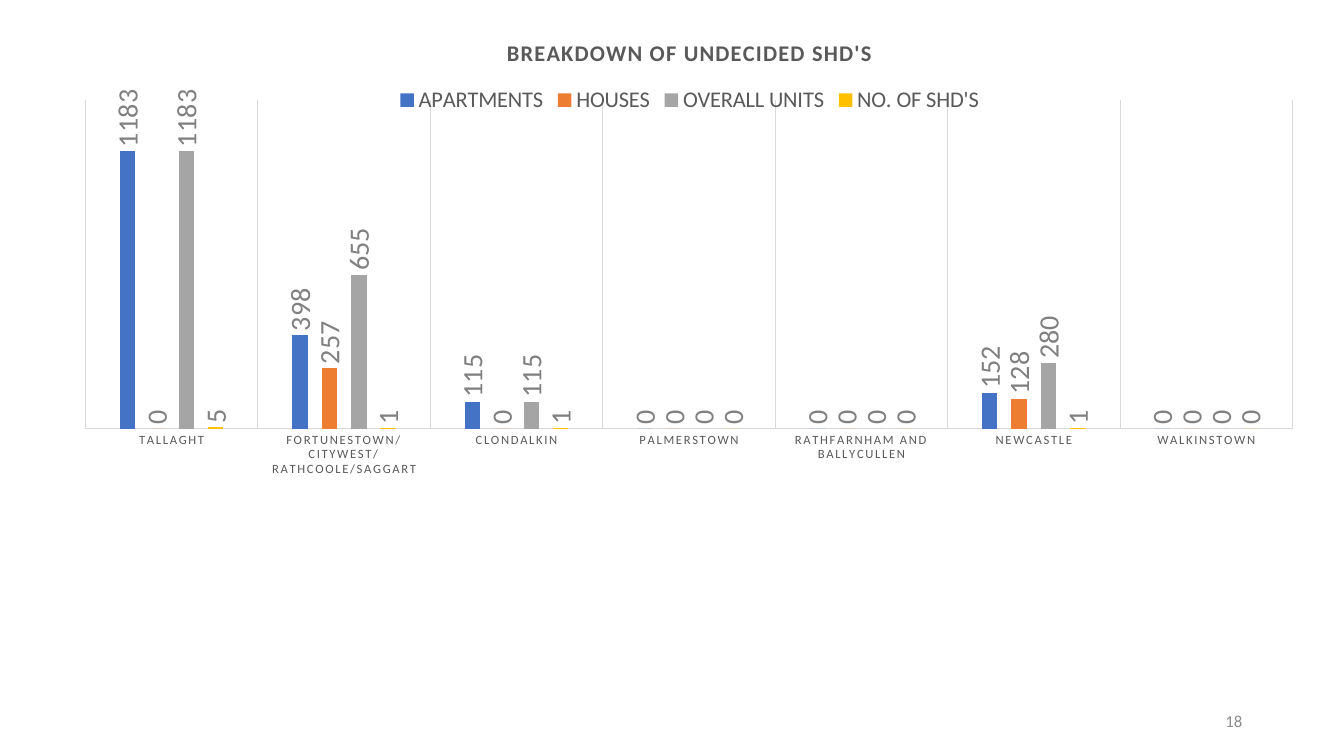
"""Build a slide with a column chart of undecided housing schemes by area."""
from lxml import etree
from pptx import Presentation
from pptx.chart.data import CategoryChartData
from pptx.dml.color import RGBColor
from pptx.enum.chart import XL_CHART_TYPE, XL_LABEL_POSITION, XL_LEGEND_POSITION, XL_TICK_MARK
from pptx.enum.text import MSO_ANCHOR, PP_ALIGN
from pptx.oxml.ns import qn
from pptx.util import Inches, Pt

CLUSTERED = XL_CHART_TYPE.COLUMN_CLUSTERED
OUTSIDE_END = XL_LABEL_POSITION.OUTSIDE_END
LEGEND_TOP = XL_LEGEND_POSITION.TOP
NO_TICK = XL_TICK_MARK.NONE
MIDDLE = MSO_ANCHOR.MIDDLE
RIGHT = PP_ALIGN.RIGHT

WIDTH, HEIGHT = Inches(13.33), Inches(7.5)
FONT = "Calibri"
COLORS = {
    "heading": "595959",
    "value": "808080",
    "page": "8C8C8C",
    "rule": "D9D9D9",
    "APARTMENTS": "4472C4",
    "HOUSES": "ED7D31",
    "OVERALL UNITS": "A5A5A5",
    "NO. OF SHD'S": "FFC000",
}
AREAS = [
    "TALLAGHT",
    "FORTUNESTOWN/CITYWEST/RATHCOOLE/SAGGART",
    "CLONDALKIN",
    "PALMERSTOWN",
    "RATHFARNHAM AND BALLYCULLEN",
    "NEWCASTLE",
    "WALKINSTOWN",
]
COUNTS = {
    "APARTMENTS": [1183, 398, 115, 0, 0, 152, 0],
    "HOUSES": [0, 257, 0, 0, 0, 128, 0],
    "OVERALL UNITS": [1183, 655, 115, 0, 0, 280, 0],
    "NO. OF SHD'S": [5, 1, 1, 0, 0, 1, 0],
}
PLOT_SHARES = {"x": 0.012, "y": 0.127, "w": 0.975, "h": 0.49}


def color(key):
    return RGBColor.from_string(COLORS[key])


def apply(target, formats):
    for attribute, value in formats.items():
        setattr(target, attribute, value)


def style_font(font, size, color_key, bold=False):
    apply(font, {"name": FONT, "size": Pt(size), "bold": bold})
    font.color.rgb = color(color_key)


def style_rule(line):
    line.color.rgb = color("rule")
    line.width = Pt(0.75)


def set_xml(root, query, attributes):
    for node in root.xpath(query):
        for key, value in attributes.items():
            node.set(key, value)


def place_plot(chart):
    plot_area = chart.element.xpath("c:chart/c:plotArea")[0]
    for old_layout in plot_area.findall(qn("c:layout")):
        plot_area.remove(old_layout)
    layout = etree.Element(qn("c:layout"))
    manual = etree.SubElement(layout, qn("c:manualLayout"))
    settings = {"layoutTarget": "inner", "xMode": "edge", "yMode": "edge", **PLOT_SHARES}
    for tag, value in settings.items():
        etree.SubElement(manual, qn(f"c:{tag}")).set("val", str(value))
    plot_area.insert(0, layout)


def add_title(chart, text):
    chart.has_title = True
    run = chart.chart_title.text_frame.paragraphs[0].add_run()
    run.text = text
    style_font(run.font, 16, "heading", bold=True)
    set_xml(chart.element, ".//c:title//a:rPr", {"spc": "100"})


def add_legend(chart):
    chart.has_legend = True
    apply(chart.legend, {"position": LEGEND_TOP, "include_in_layout": False})
    style_font(chart.legend.font, 16, "heading")


def style_axes(chart):
    areas, counts = chart.category_axis, chart.value_axis
    apply(areas, {"major_tick_mark": NO_TICK, "minor_tick_mark": NO_TICK,
                  "has_major_gridlines": True})
    style_font(areas.tick_labels.font, 9, "heading")
    style_rule(areas.format.line)
    style_rule(areas.major_gridlines.format.line)
    set_xml(chart.element, ".//c:catAx/c:txPr//a:defRPr", {"spc": "120"})
    apply(counts, {"visible": False, "has_major_gridlines": False,
                   "minimum_scale": 0, "maximum_scale": 1400})


def style_series(chart):
    apply(chart.plots[0], {"gap_width": 444, "overlap": -90, "vary_by_categories": False})
    for series in chart.plots[0].series:
        series.format.fill.solid()
        series.format.fill.fore_color.rgb = color(series.name)
        series.invert_if_negative = False
        labels = series.data_labels
        apply(labels, {"show_value": True, "position": OUTSIDE_END})
        style_font(labels.font, 20, "value")
    set_xml(chart.element, ".//c:dLbls/c:txPr/a:bodyPr", {"rot": "-5400000", "vert": "horz"})


def add_breakdown(slide):
    data = CategoryChartData()
    data.categories = AREAS
    for name, values in COUNTS.items():
        data.add_series(name, values)
    frame = slide.shapes.add_chart(
        CLUSTERED, Inches(0.7), int(HEIGHT * 0.02), Inches(12.28), Inches(6.65), data)
    chart = frame.chart
    apply(chart.font, {"name": FONT, "size": Pt(10)})
    add_title(chart, "BREAKDOWN OF UNDECIDED SHD'S")
    add_legend(chart)
    style_axes(chart)
    style_series(chart)
    place_plot(chart)


def add_page_number(slide, number):
    box = slide.shapes.add_textbox(Inches(9.42), Inches(6.95), Inches(3), Inches(0.4))
    apply(box.text_frame, {"word_wrap": True, "vertical_anchor": MIDDLE})
    paragraph = box.text_frame.paragraphs[0]
    apply(paragraph, {"alignment": RIGHT, "space_after": Pt(6)})
    run = paragraph.add_run()
    run.text = number
    style_font(run.font, 12, "page")


def main():
    deck = Presentation()
    apply(deck, {"slide_width": WIDTH, "slide_height": HEIGHT})
    slide = deck.slides.add_slide(deck.slide_layouts[6])
    add_page_number(slide, "18")
    add_breakdown(slide)
    deck.save("out.pptx")


if __name__ == "__main__":
    main()
